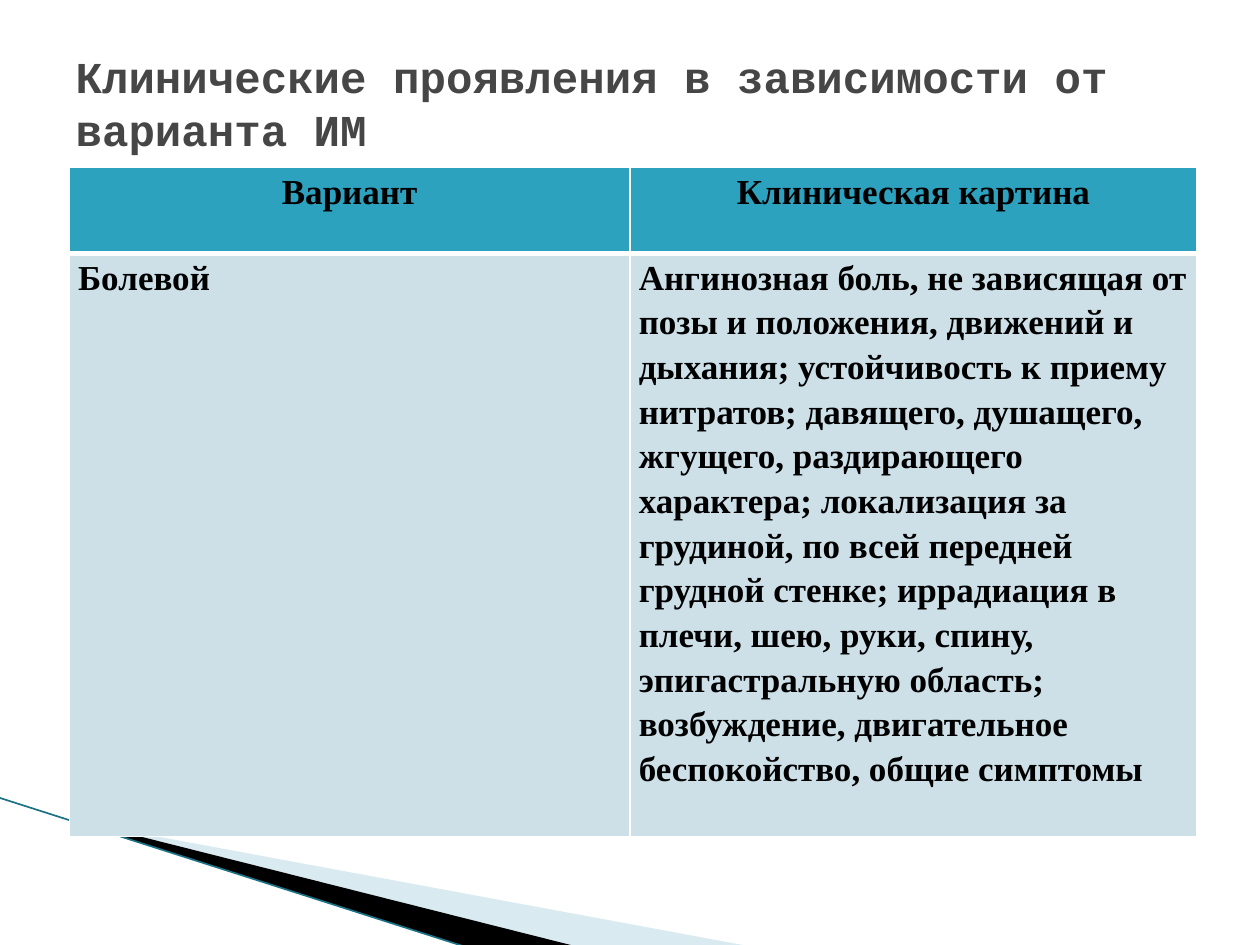
from dataclasses import dataclass

from lxml.etree import SubElement
from pptx import Presentation
from pptx.dml.color import RGBColor
from pptx.enum.shapes import MSO_CONNECTOR
from pptx.enum.text import MSO_ANCHOR, MSO_AUTO_SIZE, PP_ALIGN
from pptx.oxml import parse_xml
from pptx.oxml.ns import nsdecls, qn
from pptx.util import Inches, Pt


@dataclass(frozen=True)
class Theme:
    title_font: str = "Courier New"
    table_font: str = "Times New Roman"
    title_size: float = 25.2
    table_size: float = 20
    title: str = "464646"
    ink: str = "000000"
    header: str = "2DA2BF"
    body: str = "CDE0E8"
    border: str = "FFFFFF"
    wedge_light: str = "A0CBDC"
    edge: str = "1B7285"


@dataclass(frozen=True)
class Wedge:
    frame: tuple
    points: tuple
    color: str
    opacity: int = 100


@dataclass(frozen=True)
class Row:
    height: float
    texts: tuple
    fill: str
    align: PP_ALIGN
    bottom_border: float


THEME = Theme()

WEDGES = (
    Wedge((0.78, 5.47, 4.16, 1.58),
          ((0.55, 6.51), (5.95, 7.51), (4.56, 7.51), (0.55, 6.5)), THEME.wedge_light, 40),
    Wedge((-0.06, 6.33, 4.16, 0.92),
          ((0.56, 6.5), (4.57, 7.51), (3.72, 7.52), (0.56, 6.51)), THEME.ink),
)

COLUMN_WIDTHS = (4.45, 4.5)
ROWS = (
    Row(0.68, ("Вариант", "Клиническая картина"), THEME.header, PP_ALIGN.CENTER, 3),
    Row(4.63, (
        "Болевой",
        "Ангинозная боль, не зависящая от позы и положения, движений и дыхания; "
        "устойчивость к приему нитратов; давящего, душащего, жгущего, раздирающего "
        "характера; локализация за грудиной, по всей передней грудной стенке; "
        "иррадиация в плечи, шею, руки, спину, эпигастральную область; "
        "возбуждение, двигательное беспокойство, общие симптомы",
    ), THEME.body, PP_ALIGN.LEFT, 1),
)


def write_text(frame, text: str, *, font: str, size: float, color: str,
               align=PP_ALIGN.LEFT, spacing: float = 1, after: float = 0) -> None:
    """Fill a text frame with one bold paragraph."""
    para = frame.paragraphs[0]
    para.alignment = align
    para.line_spacing = spacing
    para.space_before = Pt(0)
    para.space_after = Pt(after)
    span = para.add_run()
    span.text = text
    span.font.name = font
    span.font.size = Pt(size)
    span.font.bold = True
    span.font.color.rgb = RGBColor.from_string(color)


def place(box, frame: tuple) -> None:
    box.left, box.top, box.width, box.height = map(Inches, frame)


def reframe(shape, frame: tuple) -> None:
    """Give a freeform another frame while its outline stays where it is."""
    old_left, old_top = shape.left, shape.top
    place(shape, frame)
    outline = next(shape._element.iter(qn("a:path")))
    outline.set("w", str(shape.width))
    outline.set("h", str(shape.height))
    for point in outline.iter(qn("a:pt")):
        point.set("x", str(int(point.get("x")) + old_left - shape.left))
        point.set("y", str(int(point.get("y")) + old_top - shape.top))


def draw_wedge(page, wedge: Wedge) -> None:
    points = [(Inches(x), Inches(y)) for x, y in wedge.points]
    builder = page.shapes.build_freeform(*points[0])
    builder.add_line_segments(points[1:], close=True)
    shape = builder.convert_to_shape()
    reframe(shape, wedge.frame)
    shape.shadow.inherit = False
    shape.line.fill.background()
    shape.fill.solid()
    shape.fill.fore_color.rgb = RGBColor.from_string(wedge.color)
    if wedge.opacity < 100:
        color = shape.fill._xPr.find(qn("a:solidFill"))[0]
        SubElement(color, qn("a:alpha"), val=str(wedge.opacity * 1000))


def draw_edge(page) -> None:
    edge = page.shapes.add_connector(
        MSO_CONNECTOR.STRAIGHT, Inches(-0.01), Inches(6.33), Inches(3.71), Inches(7.52))
    edge.line.color.rgb = RGBColor.from_string(THEME.edge)
    edge.line.width = Pt(0.95)
    SubElement(edge._element.spPr, qn("a:effectLst"))


def set_borders(cell, top: float, bottom: float) -> None:
    """Put the four border lines ahead of the cell fill."""
    widths = {"lnL": 1, "lnR": 1, "lnT": top, "lnB": bottom}
    properties = cell._tc.get_or_add_tcPr()
    for position, (tag, width) in enumerate(widths.items()):
        properties.insert(position, parse_xml(
            f'<a:{tag} {nsdecls("a")} w="{Pt(width)}"><a:solidFill>'
            f'<a:srgbClr val="{THEME.border}"/></a:solidFill></a:{tag}>'))


def draw_table(page) -> None:
    table = page.shapes.add_table(
        len(ROWS), len(COLUMN_WIDTHS), Inches(0.55), Inches(1.33),
        Inches(sum(COLUMN_WIDTHS)), Inches(sum(row.height for row in ROWS))).table
    for column, width in zip(table.columns, COLUMN_WIDTHS):
        column.width = Inches(width)
    top_border = 1
    for index, row in enumerate(ROWS):
        table.rows[index].height = Inches(row.height)
        for cell, text in zip(table.rows[index].cells, row.texts):
            cell.margin_left = cell.margin_right = Inches(0.07)
            cell.margin_top = cell.margin_bottom = 0
            cell.fill.solid()
            cell.fill.fore_color.rgb = RGBColor.from_string(row.fill)
            set_borders(cell, top_border, row.bottom_border)
            write_text(cell.text_frame, text, font=THEME.table_font,
                       size=THEME.table_size, color=THEME.ink,
                       align=row.align, spacing=1.15, after=12)
        top_border = row.bottom_border


def draw_title(page, text: str) -> None:
    box = page.shapes.title
    place(box, (0.5, 0.3, 9, 1.03))
    frame = box.text_frame
    frame.word_wrap = True
    frame.auto_size = MSO_AUTO_SIZE.NONE
    frame.vertical_anchor = MSO_ANCHOR.MIDDLE
    write_text(frame, text, font=THEME.title_font, size=THEME.title_size,
               color=THEME.title)


def main() -> None:
    deck = Presentation()
    deck.slide_width, deck.slide_height = Inches(10), Inches(7.5)
    page = deck.slides.add_slide(deck.slide_layouts.get_by_name("Title Only"))

    # Corner decoration
    for wedge in WEDGES:
        draw_wedge(page, wedge)
    draw_edge(page)

    # Content
    draw_table(page)
    draw_title(page, "Клинические проявления в зависимости от варианта ИМ")
    deck.save("out.pptx")


if __name__ == "__main__":
    main()
